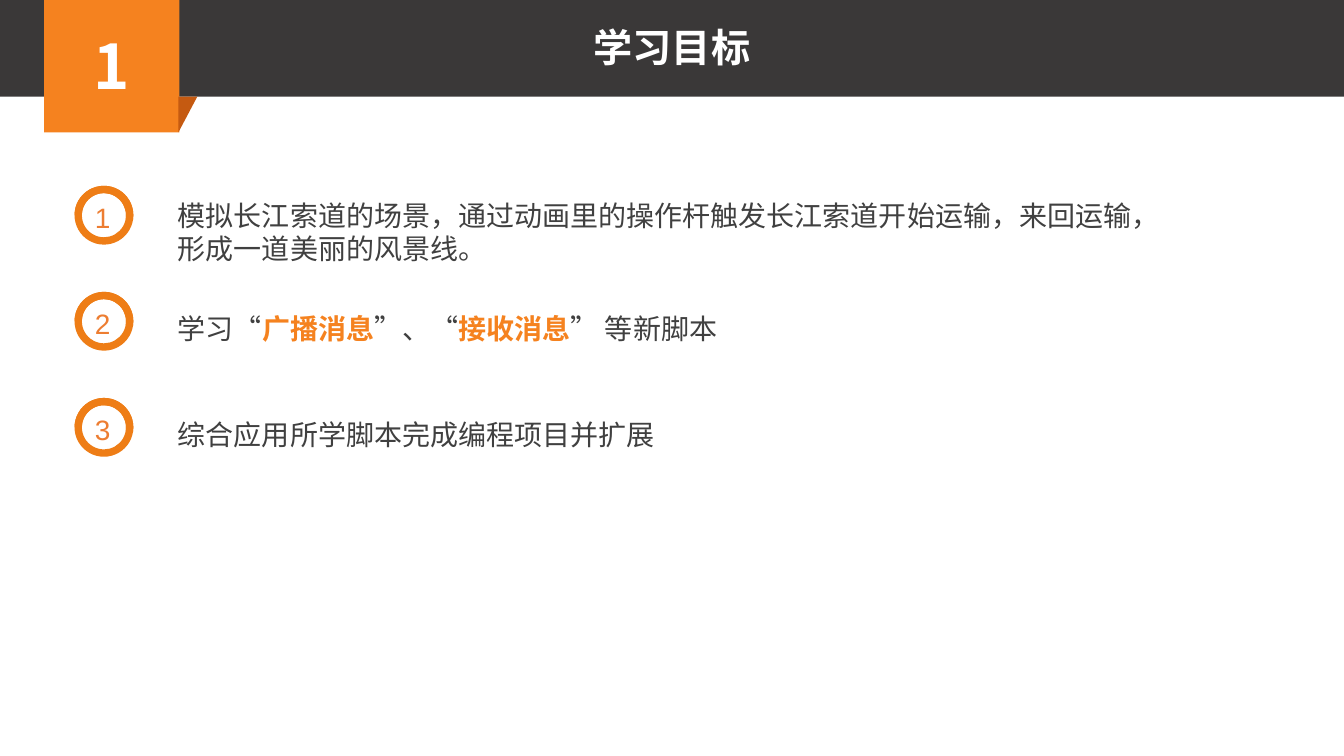
import pptx
import pptx.dml.color
import pptx.enum.shapes
import pptx.enum.text
import pptx.oxml.ns
import pptx.util
import lxml.etree

SHAPE = pptx.enum.shapes.MSO_SHAPE
ALIGN = pptx.enum.text.PP_ALIGN
ANCHOR = pptx.enum.text.MSO_ANCHOR
EMU_PER_PX = 9525
CHINESE_FONT = "Noto Sans CJK SC"
COLORS = {
    "bar": "3A3838",
    "orange": "F5821F",
    "fold": "C55A11",
    "ring": "EE7D16",
    "number": "ED7D31",
    "text": "404040",
    "white": "FFFFFF",
}
PLAIN = {"size": 20, "name": CHINESE_FONT, "color": "text", "bold": False}
KEYWORD = {**PLAIN, "color": "orange", "bold": True}
NUMBER = {"size": 20, "name": "Arial", "color": "number", "bold": False}
TITLE = {"size": 28, "name": CHINESE_FONT, "color": "white", "bold": True}
BADGE = {**TITLE, "size": 44}

# Each objective: text offset below its ring, text width, text height, runs
OBJECTIVES = [
    (7, 968, 74, [("模拟长江索道的场景，通过动画里的操作杆触发长江索道开始运输，来回运输，形成一道美丽的风景线。", PLAIN)]),
    (14, 926, 42, [
        ("学习“", PLAIN),
        ("广播消息", KEYWORD),
        ("”、“", PLAIN),
        ("接收消息", KEYWORD),
        ("” 等新脚本", PLAIN),
    ]),
    (14, 926, 42, [("综合应用所学脚本完成编程项目并扩展", PLAIN)]),
]


def px(*lengths):
    return [pptx.util.Emu(length * EMU_PER_PX) for length in lengths]


def rgb(name):
    return pptx.dml.color.RGBColor.from_string(COLORS[name])


def write_text(shape, runs, align=ALIGN.LEFT, anchor=ANCHOR.TOP, wrap=True):
    frame = shape.text_frame
    settings = {
        "word_wrap": wrap,
        "vertical_anchor": anchor,
        "auto_size": pptx.enum.text.MSO_AUTO_SIZE.NONE,
    }
    for name, value in settings.items():
        setattr(frame, name, value)
    paragraph = frame.paragraphs[0]
    paragraph.alignment = align
    for text, style in runs:
        run = paragraph.add_run()
        run.text = text
        font_values = {
            "size": pptx.util.Pt(style["size"]),
            "name": style["name"],
            "bold": style["bold"],
        }
        for name, value in font_values.items():
            setattr(run.font, name, value)
        run.font.color.rgb = rgb(style["color"])
        east_asian = lxml.etree.SubElement(
            run.font._element, pptx.oxml.ns.qn("a:ea"))
        east_asian.set("typeface", style["name"])


def add_filled(shapes, kind, box, color, adjustments=()):
    shape = shapes.add_shape(kind, *px(*box))
    shape.shadow.inherit = False
    shape.fill.solid()
    shape.fill.fore_color.rgb = rgb(color)
    shape.line.fill.background()
    for index, value in enumerate(adjustments):
        shape.adjustments[index] = value
    return shape


def add_header(slide, left, top, width, height):
    add_filled(slide.shapes, SHAPE.RECTANGLE, (left, top, width, height), "bar")
    badge_left, badge_side = left + 42, 129
    badge = add_filled(slide.shapes, SHAPE.RECTANGLE,
                       (badge_left, top, badge_side, badge_side), "orange")
    write_text(badge, [("1", BADGE)], ALIGN.CENTER, ANCHOR.MIDDLE)
    fold = add_filled(
        slide.shapes, SHAPE.RIGHT_TRIANGLE,
        (badge_left + badge_side - 1, top + height, 18, badge_side - height), "fold")
    fold._element.spPr.xfrm.set("flipV", "1")

    title = slide.shapes.title
    title_box = px(left + (width - 420) // 2, top + 20, 420, 55)
    for name, value in zip(("left", "top", "width", "height"), title_box):
        setattr(title, name, value)
    write_text(title, [("学习目标", TITLE)], ALIGN.CENTER)
    # The title has to lie in front of the bar
    title.element.getparent().append(title.element)


def add_numbered_ring(slide, number, left, top, side):
    group = slide.shapes.add_group_shape()
    ring_box = (left, top, side, side)
    add_filled(group.shapes, SHAPE.DONUT, ring_box, "ring", [0.125])
    add_filled(group.shapes, SHAPE.BLOCK_ARC, ring_box, "ring", [107.95, 5.13, 0.125])
    label = group.shapes.add_textbox(*px(left + 10, top + 9, 35, 42))
    write_text(label, [(str(number), NUMBER)], wrap=False)


def add_objectives(slide, left, top, pitch):
    for index, (offset, width, height, runs) in enumerate(OBJECTIVES):
        row_top = top + index * pitch
        add_numbered_ring(slide, index + 1, left, row_top, 56)
        text_box = slide.shapes.add_textbox(
            *px(left + 89, row_top + offset, width, height))
        write_text(text_box, runs)


def main():
    presentation = pptx.Presentation()
    presentation.slide_width, presentation.slide_height = px(1280, 720)
    slide = presentation.slides.add_slide(
        presentation.slide_layouts.get_by_name("Title Only"))
    add_header(slide, 0, -3, 1280, 95)
    add_objectives(slide, 71, 177, 101)
    presentation.save("out.pptx")


if __name__ == "__main__":
    main()
